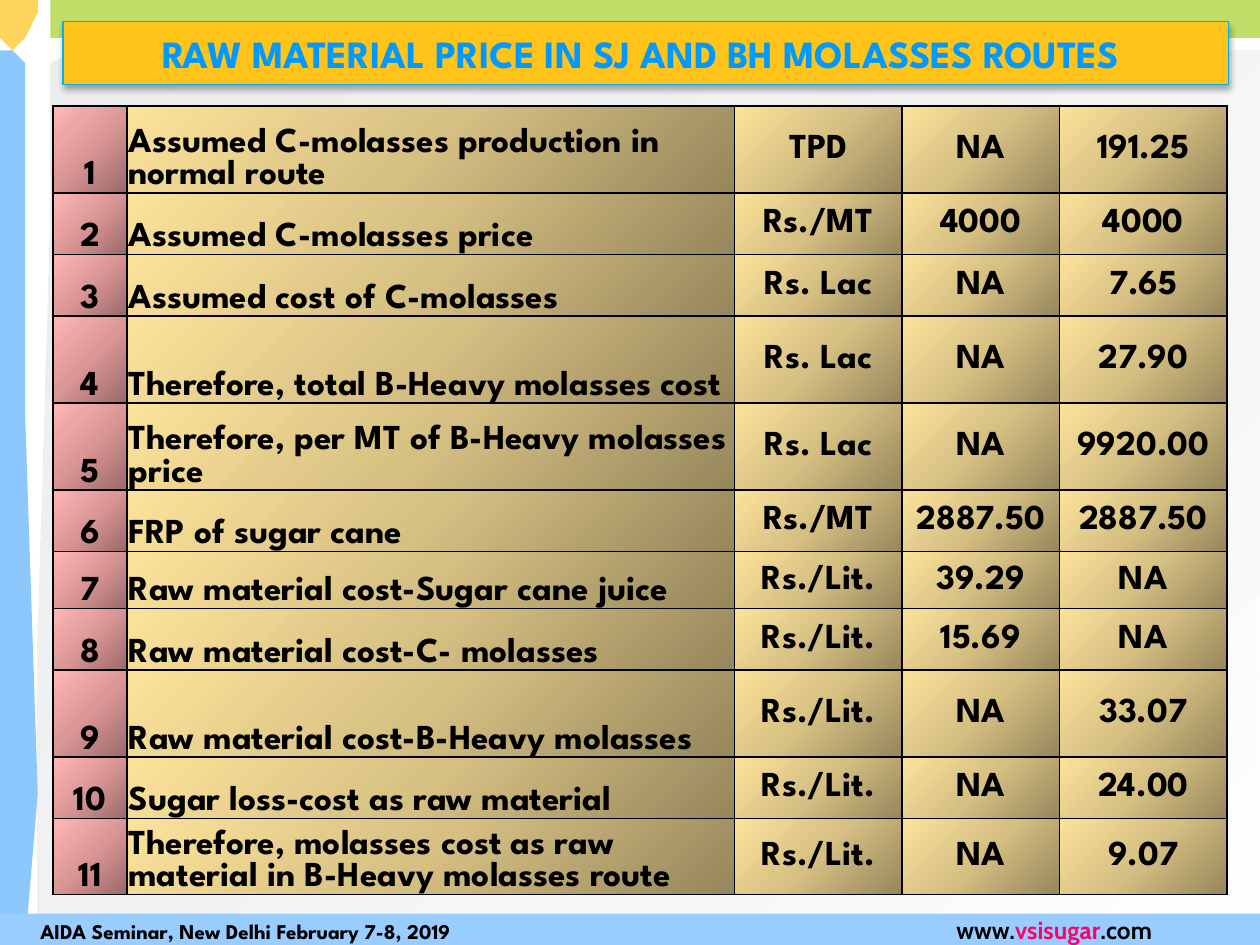
import pptx
import pptx.dml.color
import pptx.enum.shapes
import pptx.enum.text
import pptx.oxml
import pptx.oxml.ns
import pptx.util

COLORS = {
    "black": "000000", "white": "FFFFFF", "gray": "E6E6E6",
    "green": "A8D02A", "blue": "5CB1FE", "gold": "FFC319",
    "footer": "99CCFF", "pink": "FF0066", "title": "0099FF", "outline": "00B0F0",
}
ROSE = [(0, "9A6969", 100), (50, "DB9696", 100), (100, "FFB7B7", 100)]
SAND = [(0, "96865C", 100), (50, "D5BF82", 100), (100, "FCE39B", 100)]
HEADING_FONT, FOOTER_FONT = "League Spartan", "Cabin"
CENTER = pptx.enum.text.PP_ALIGN.CENTER
LEFT = pptx.enum.text.PP_ALIGN.LEFT
MIDDLE = pptx.enum.text.MSO_ANCHOR.MIDDLE
BOTTOM = pptx.enum.text.MSO_ANCHOR.BOTTOM

# The slide is a grid of 100 columns by 75 rows of square units.
GRID_COLUMNS, GRID_ROWS = 100, 75
UNIT = pptx.util.Inches(0.1)

COLUMN_WIDTHS = [5.9, 48.2, 13.3, 12.5, 13.3]
# Row height, description, unit, cane juice route, B-Heavy molasses route
PRICES = [
    (6.9, "Assumed C-molasses production in normal route", "TPD", "NA", "191.25"),
    (4.9, "Assumed C-molasses price", "Rs./MT", "4000", "4000"),
    (4.9, "Assumed cost of C-molasses", "Rs. Lac", "NA", "7.65"),
    (6.9, "Therefore, total B-Heavy molasses cost", "Rs. Lac", "NA", "27.90"),
    (6.9, "Therefore, per MT of B-Heavy molasses price", "Rs. Lac", "NA", "9920.00"),
    (4.9, "FRP of sugar cane", "Rs./MT", "2887.50", "2887.50"),
    (4.5, "Raw material cost-Sugar cane juice", "Rs./Lit.", "39.29", "NA"),
    (4.9, "Raw material cost-C- molasses", "Rs./Lit.", "15.69", "NA"),
    (6.9, "Raw material cost-B-Heavy molasses", "Rs./Lit.", "NA", "33.07"),
    (4.9, "Sugar loss-cost as raw material", "Rs./Lit.", "NA", "24.00"),
    (6, "Therefore, molasses cost as raw material in B-Heavy molasses route",
     "Rs./Lit.", "NA", "9.07"),
]

GRAY_PANEL = [(100, 75), (100, 4.2), (94, 4), (85, 4.2), (43, 4.2), (18, 4.2),
              (5.7, 4.5), (4.1, 4.8), (3.6, 5.7), (3.5, 18), (3.4, 51), (3.3, 75)]
GREEN_BAND = [(100, 0), (100, 2.6), (96, 2.8), (83, 3.2), (63, 3.2), (43, 3.1),
              (20, 3.1), (4.9, 3.4), (4.1, 3.2), (3.6, 2.7), (3.6, 0)]
BLUE_BAND = [(0, 75), (2.5, 75), (2.6, 63), (2.4, 33), (2.4, 17), (2.3, 5.4),
             (2.2, 4.9), (1.8, 4.6), (1, 4.4), (0, 4.4)]
GOLD_CORNER = [(0, 0), (2.6, 0), (2.6, 1.4), (2.5, 2.6), (2.1, 3.2), (1.5, 3.4),
               (0.8, 3.5), (0, 3.4)]


def units(*lengths):
    return [round(length * UNIT) for length in lengths]


def parse_drawing(tag, content, attributes=""):
    namespace = pptx.oxml.ns.nsdecls("a")
    return pptx.oxml.parse_xml(f"<a:{tag} {namespace} {attributes}>{content}</a:{tag}>")


def color_xml(color, opacity=100):
    return f'<a:srgbClr val="{color}"><a:alpha val="{opacity * 1000}"/></a:srgbClr>'


def gradient(stops, angle):
    """Linear fill from (position, color, opacity) stops, angle clockwise."""
    stop_xml = "".join(f'<a:gs pos="{position * 1000}">{color_xml(color, opacity)}</a:gs>'
                       for position, color, opacity in stops)
    return parse_drawing("gradFill", f'<a:gsLst>{stop_xml}</a:gsLst>'
                         f'<a:lin ang="{angle * 60000}" scaled="0"/>')


def set_format(target, values):
    for name, value in values.items():
        setattr(target, name, value)


def add_run(paragraph, text, size, font=HEADING_FONT, color="black"):
    run = paragraph.add_run()
    run.text = text
    set_format(run.font, {"size": pptx.util.Pt(size), "name": font, "bold": True})
    run.font.color.rgb = pptx.dml.color.RGBColor.from_string(COLORS[color])


def add_panel(slide, points, fill):
    builder = slide.shapes.build_freeform(*points[0], scale=UNIT)
    builder.add_line_segments(points[1:], close=True)
    shape = builder.convert_to_shape()
    shape.shadow.inherit = False
    shape.line.fill.background()
    shape.fill.background()
    properties = shape.fill._xPr
    properties.replace(properties.find(pptx.oxml.ns.qn("a:noFill")), fill)


def add_bar(slide, place, color):
    shape = slide.shapes.add_shape(pptx.enum.shapes.MSO_SHAPE.RECTANGLE, *units(*place))
    shape.shadow.inherit = False
    shape.fill.solid()
    shape.fill.fore_color.rgb = pptx.dml.color.RGBColor.from_string(COLORS[color])
    shape.line.fill.background()
    set_format(shape.text_frame, {"word_wrap": True, "vertical_anchor": MIDDLE})
    return shape


def add_background(slide):
    gray_stops = [(0, COLORS["gray"], 70), (100, COLORS["white"], 100)]
    add_panel(slide, GRAY_PANEL, gradient(gray_stops, 45))
    for points, color in ((GREEN_BAND, "green"), (BLUE_BAND, "blue"), (GOLD_CORNER, "gold")):
        add_panel(slide, points, parse_drawing("solidFill", color_xml(COLORS[color], 70)))


def add_footer(slide):
    shape = add_bar(slide, (0, 72.5, GRID_COLUMNS, 2.5), "footer")
    text_start, address_start = units(3.2, 75.9)
    set_format(shape.text_frame, {"margin_left": text_start, "margin_right": 0,
                                  "margin_top": 0, "margin_bottom": 0})
    paragraph = shape.text_frame.paragraphs[0]
    paragraph.alignment = LEFT
    tab = f'<a:tab pos="{address_start - text_start}" algn="l"/>'
    paragraph._p.get_or_add_pPr().append(parse_drawing("tabLst", tab))
    add_run(paragraph, "AIDA Seminar, New Delhi February 7-8, 2019\t", 12)
    for text, color in (("www.", "black"), ("vsisugar", "pink"), (".com", "black")):
        add_run(paragraph, text, 14, FOOTER_FONT, color)


def add_title(slide):
    shape = add_bar(slide, (5, 1.7, 92.5, 5), "gold")
    shape.line.color.rgb = pptx.dml.color.RGBColor.from_string(COLORS["outline"])
    shape.line.width = pptx.util.Pt(0.75)
    blur, distance = pptx.util.Pt(3.5), pptx.util.Pt(2.2)
    effects = shape.fill._xPr.find(pptx.oxml.ns.qn("a:effectLst"))
    effects.append(parse_drawing(
        "outerShdw", color_xml(COLORS["black"], 32),
        f'blurRad="{blur}" dist="{distance}" dir="5400000" rotWithShape="0"'))
    paragraph = shape.text_frame.paragraphs[0]
    paragraph.alignment = CENTER
    add_run(paragraph, "RAW MATERIAL PRICE IN SJ AND BH MOLASSES ROUTES ", 22, color="title")


def fill_cell(cell, text, column):
    margin = units(0.1)[0]
    set_format(cell, {"margin_left": margin, "margin_right": margin,
                      "margin_top": margin, "margin_bottom": 0,
                      "vertical_anchor": BOTTOM if column < 2 else MIDDLE})
    paragraph = cell.text_frame.paragraphs[0]
    paragraph.alignment = LEFT if column == 1 else CENTER
    add_run(paragraph, text, 20)
    properties = cell._tc.get_or_add_tcPr()
    line_fill = f'<a:solidFill>{color_xml(COLORS["black"])}</a:solidFill>'
    for side in ("lnL", "lnR", "lnT", "lnB"):
        properties.append(parse_drawing(side, line_fill, f'w="{pptx.util.Pt(1)}"'))
    properties.append(gradient(SAND if column else ROSE, 225))


def add_price_table(slide):
    heights = [price[0] for price in PRICES]
    place = units(4.2, 8.4, sum(COLUMN_WIDTHS), sum(heights))
    table = slide.shapes.add_table(len(PRICES), len(COLUMN_WIDTHS), *place).table
    set_format(table, {"first_row": False, "horz_banding": False})
    for column, width in zip(table.columns, units(*COLUMN_WIDTHS)):
        column.width = width
    for row, height in zip(table.rows, units(*heights)):
        row.height = height
    for row_index, (_, *texts) in enumerate(PRICES):
        for column_index, text in enumerate([str(row_index + 1), *texts]):
            fill_cell(table.cell(row_index, column_index), text, column_index)


def main():
    presentation = pptx.Presentation()
    presentation.slide_width, presentation.slide_height = units(GRID_COLUMNS, GRID_ROWS)
    slide = presentation.slides.add_slide(presentation.slide_layouts[6])
    add_background(slide)
    add_footer(slide)
    add_price_table(slide)
    add_title(slide)
    presentation.save("out.pptx")


if __name__ == "__main__":
    main()
